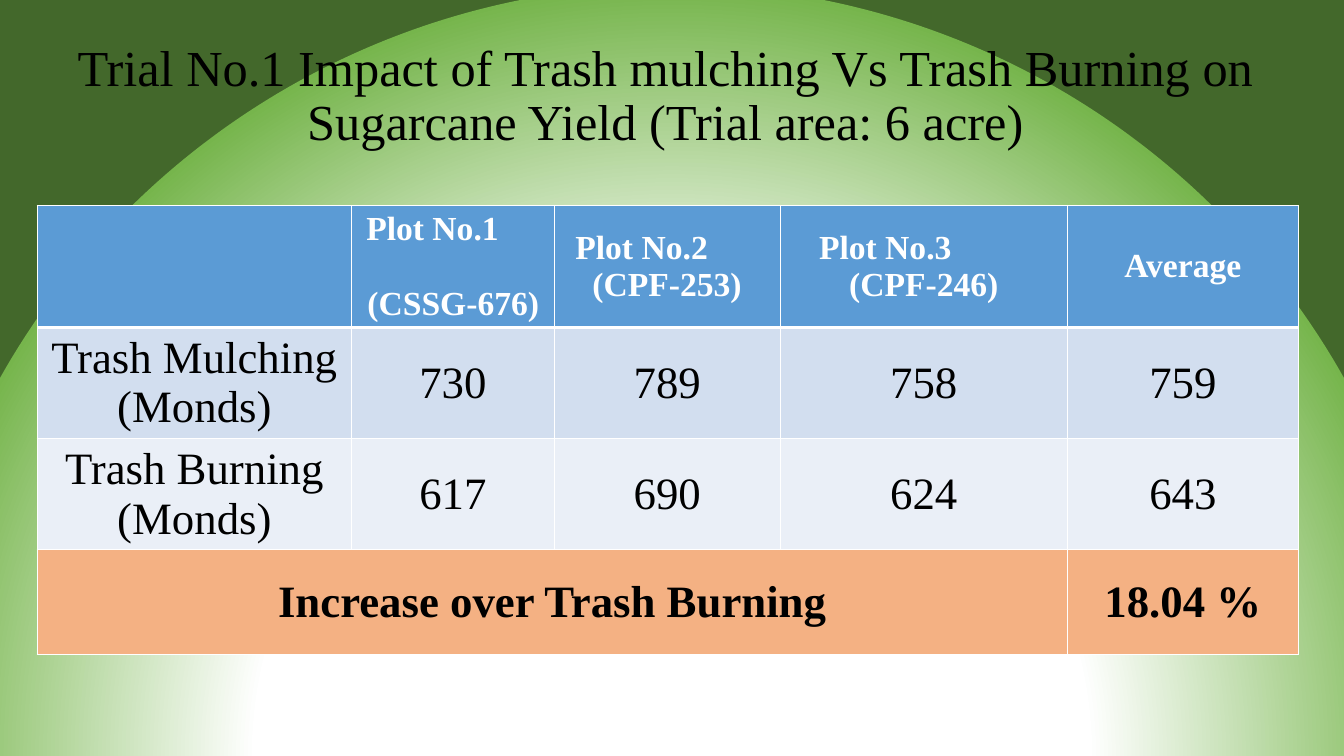
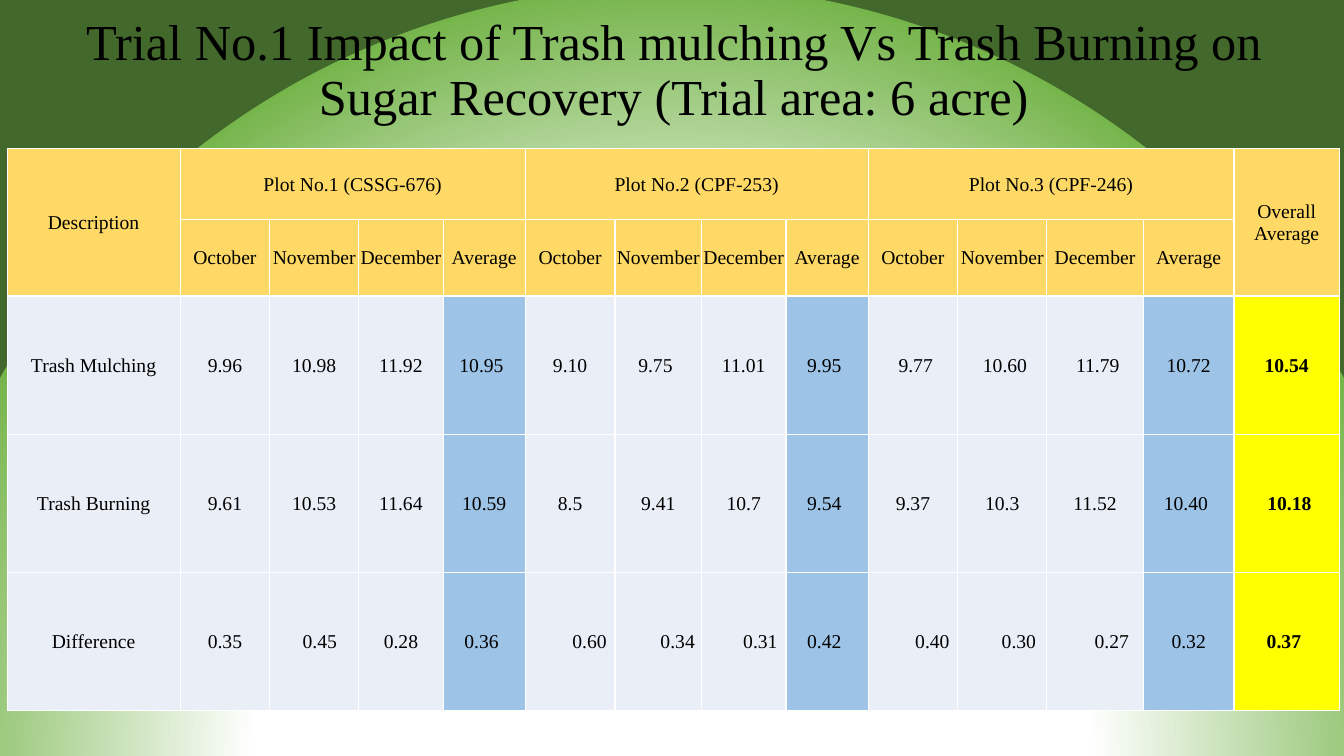
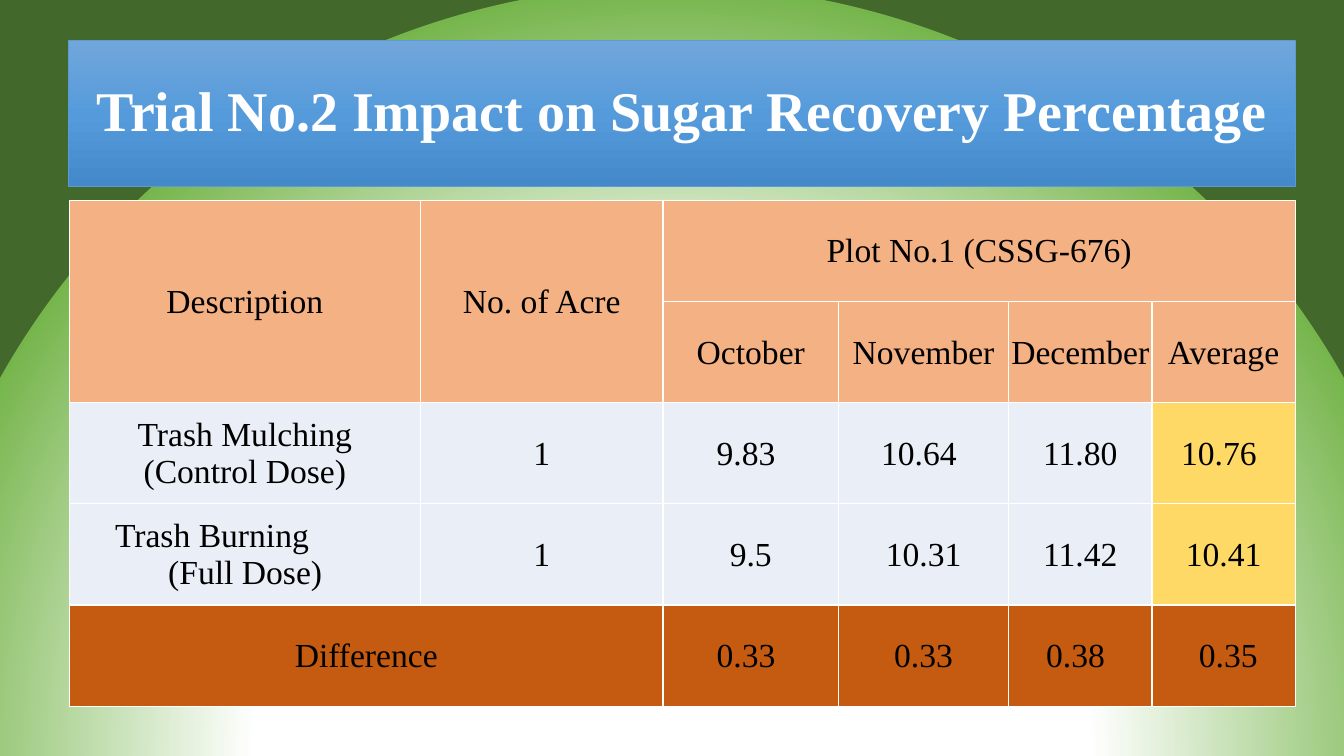
from dataclasses import dataclass, field
from itertools import product

from pptx import Presentation
from pptx.dml.color import RGBColor
from pptx.enum.shapes import MSO_SHAPE as Shape
from pptx.enum.text import MSO_ANCHOR as Anchor, PP_ALIGN as Align
from pptx.oxml import parse_xml
from pptx.oxml.ns import nsdecls
from pptx.util import Cm, Pt


@dataclass(frozen=True)
class Theme:
    font: str = "Times New Roman"
    black: str = "000000"
    white: str = "FFFFFF"
    blue: str = "5B9BD5"
    sky: str = "9DC3E6"
    mist: str = "D2DEEF"
    pale: str = "EAEFF7"
    peach: str = "F4B183"
    gold: str = "FFD966"
    yellow: str = "FFFF00"
    rust: str = "C55A11"
    title: int = 36
    banner: int = 40
    large: int = 32
    medium: int = 24
    small: int = 14
    space: float = 0.25
    cm_per_point: float = 0.04
    backdrop: tuple = ((54, "FFFFFF", 70), (100, "76B54C", 100), (100, "43682B", 100))
    banner_fill: tuple = ((0, "71A6DB", 100), (50, "559BDB", 100), (100, "448ACA", 100))


THEME = Theme()
RADIAL = '<a:path {} path="circle"><a:fillToRect l="50000" t="130000" r="50000" b="-30000"/></a:path>'
DOWNWARD = '<a:lin {} ang="5400000" scaled="0"/>'
MONTHS = ["October", "November", "December", "Average"]


@dataclass
class TrialSlide:
    title: str
    title_box: tuple
    corner: tuple
    columns: list
    rows: list
    cells: list
    fills: list
    sizes: list
    spans: list
    banner: bool = False
    compact: bool = True
    bold_rows: tuple = ()
    bold_columns: tuple = ()
    accents: dict = field(default_factory=dict)
    nudges: dict = field(default_factory=dict)
    indents: dict = field(default_factory=dict)
    gaps: dict = field(default_factory=dict)
    heavy_row: int = 0


SLIDES = [
    TrialSlide(
        title="Trial No.1 Impact of Trash mulching Vs Trash Burning on Sugarcane Yield (Trial area: 6 acre)",
        title_box=(0.58, 0.91, 32.39, 3.07),
        corner=(0.94, 5.18),
        columns=[7.92, 5.11, 5.69, 7.24, 5.82],
        rows=[3.07, 2.8, 2.8, 2.64],
        cells=[
            [None, "Plot No.1\n(CSSG-676)", "Plot No.2\n(CPF-253)", "Plot No.3\n(CPF-246)", "Average"],
            ["Trash Mulching\n(Monds)", "730", "789", "758", "759"],
            ["Trash Burning (Monds)", "617", "690", "624", "643"],
            ["Increase over Trash Burning", None, None, None, "18.04 %"],
        ],
        fills=[THEME.blue, THEME.mist, THEME.pale, THEME.peach],
        sizes=[THEME.medium] + [THEME.large] * 3,
        spans=[(3, 0, 1, 4)],
        compact=False,
        bold_rows=(0, 3),
        indents={(0, 1): (0.12, 0.15), (0, 2): (0.28, 0.71), (0, 3): (0.73, 1.49)},
        gaps={(0, 1): 0.94},
        heavy_row=1,
    ),
    TrialSlide(
        title="Trial No.1 Impact of Trash mulching Vs Trash Burning on Sugar Recovery (Trial area: 6 acre)",
        title_box=(0.58, 0.28, 32.82, 3.05),
        corner=(0.18, 3.75),
        columns=[4.36, 2.26, 2.24, 2.13, 2.07, 2.26, 2.18, 2.13, 2.07, 2.26, 2.24, 2.44, 2.28, 2.66],
        rows=[1.78, 1.93] + [3.48] * 3,
        cells=[
            ["Description", "Plot No.1 (CSSG-676)", None, None, None, "Plot No.2 (CPF-253)", None, None, None,
             "Plot No.3 (CPF-246)", None, None, None, "Overall Average"],
            [None, *MONTHS * 3, None],
            ["Trash Mulching", "9.96", "10.98", "11.92", "10.95", "9.10", "9.75", "11.01", "9.95",
             "9.77", "10.60", "11.79", "10.72", "10.54"],
            ["Trash Burning", "9.61", "10.53", "11.64", "10.59", "8.5", "9.41", "10.7", "9.54",
             "9.37", "10.3", "11.52", "10.40", "10.18"],
            ["Difference", "0.35", "0.45", "0.28", "0.36", "0.60", "0.34", "0.31", "0.42",
             "0.40", "0.30", "0.27", "0.32", "0.37"],
        ],
        fills=[THEME.gold] * 2 + [THEME.pale] * 3,
        sizes=[THEME.small] * 5,
        spans=[(0, 0, 2, 1), (0, 1, 1, 4), (0, 5, 1, 4), (0, 9, 1, 4), (0, 13, 2, 1)],
        bold_columns=(13,),
        accents={4: THEME.sky, 8: THEME.sky, 12: THEME.sky, 13: THEME.yellow},
        nudges={
            2: [0, 0, 0, 0, -1, 0, -1, 0, -1, 1, 1, 1, 0, 0],
            3: [0, 0, 0, 0, 0, 0, 0, 0, -1, 0, 0, 0, -1, 1],
            4: [0, 0, 2, 0, -1, 7, 7, 6, -1, 7, 6, 6, 0, -1],
        },
    ),
    TrialSlide(
        title="Trial No.2 Impact on Sugar Recovery Percentage",
        title_box=(1.73, 1.02, 30.91, 3.68),
        corner=(1.75, 5.05),
        columns=[8.84, 6.12, 4.42, 4.29, 3.61, 3.61],
        rows=[2.55] * 5,
        cells=[
            ["Description", "No. of Acre", "Plot No.1 (CSSG-676)", None, None, None],
            [None, None, *MONTHS],
            ["Trash Mulching\n(Control Dose)", "1", "9.83", "10.64", "11.80", "10.76"],
            ["Trash Burning\n(Full Dose)", "1", "9.5", "10.31", "11.42", "10.41"],
            ["Difference", None, "0.33", "0.33", "0.38", "0.35"],
        ],
        fills=[THEME.peach] * 2 + [THEME.pale] * 2 + [THEME.rust],
        sizes=[THEME.medium] * 5,
        spans=[(0, 0, 2, 1), (0, 1, 2, 1), (0, 2, 1, 4), (4, 0, 1, 2)],
        banner=True,
        accents={5: THEME.gold},
        nudges={2: [0, 0, -1, -1, 0, -1], 4: [0, 0, -1, 0, -1, 1]},
        indents={(3, 0): (1.13, 2.47)},
    ),
]


def set_gradient(parent, stops, direction):
    gradient = parent.xpath(".//a:gradFill")[0]
    for child in list(gradient):
        gradient.remove(child)
    marks = "".join(
        f'<a:gs pos="{position * 1000}"><a:srgbClr val="{colour}">'
        f'<a:alpha val="{opacity * 1000}"/></a:srgbClr></a:gs>'
        for position, colour, opacity in stops
    )
    gradient.append(parse_xml(f'<a:gsLst {nsdecls("a")}>{marks}</a:gsLst>'))
    gradient.append(parse_xml(direction.format(nsdecls("a"))))


def style_paragraph(paragraph, size, colour, bold):
    for font in [paragraph.font, *(run.font for run in paragraph.runs)]:
        font.name, font.size, font.bold = THEME.font, Pt(size), bold
        font.color.rgb = RGBColor.from_string(colour)


def add_title(slide, content):
    box = [Cm(length) for length in content.title_box]
    if content.banner:
        shape = slide.shapes.add_shape(Shape.RECTANGLE, *box)
        shape.shadow.inherit = False
        shape.fill.gradient()
        set_gradient(shape.element.spPr, THEME.banner_fill, DOWNWARD)
        shape.line.color.rgb = RGBColor.from_string(THEME.blue)
        shape.line.width = Pt(0.5)
        size, colour = THEME.banner, THEME.white
    else:
        shape = slide.shapes.add_textbox(*box)
        size, colour = THEME.title, THEME.black
    frame = shape.text_frame
    frame.text = content.title
    frame.word_wrap = True
    frame.vertical_anchor = Anchor.MIDDLE
    paragraph = frame.paragraphs[0]
    paragraph.alignment = Align.CENTER
    paragraph.line_spacing = 0.9
    style_paragraph(paragraph, size, colour, content.banner)


def add_borders(cell, top, bottom):
    properties = cell._tc.get_or_add_tcPr()
    for side, width in (("L", 1), ("R", 1), ("T", top), ("B", bottom)):
        properties.append(parse_xml(
            f'<a:ln{side} {nsdecls("a")} w="{Pt(width)}"><a:solidFill>'
            f'<a:srgbClr val="{THEME.white}"/></a:solidFill></a:ln{side}>'
        ))


def set_margins(cell, compact, shift):
    side, top, bottom = (0.02, 0.03, 0) if compact else (0.25, 0.03, 0.03)
    cell.margin_left = Cm(side + max(shift, 0))
    cell.margin_right = Cm(side + max(-shift, 0))
    cell.margin_top, cell.margin_bottom = Cm(top), Cm(bottom)


def fill_cell(cell, content, row, column):
    base = content.fills[row]
    body = base == THEME.pale
    fill = content.accents.get(column, base) if body else base
    size = content.sizes[row]
    bold = row in content.bold_rows or (body and column in content.bold_columns)
    nudge = content.nudges[row][column] if row in content.nudges else 0
    heavy = content.heavy_row
    add_borders(cell, 3 if heavy and row == heavy else 1, 3 if row == heavy - 1 else 1)
    cell.fill.solid()
    cell.fill.fore_color.rgb = RGBColor.from_string(fill)
    set_margins(cell, content.compact, nudge * size * THEME.space * THEME.cm_per_point)
    cell.vertical_anchor = Anchor.MIDDLE
    text = content.cells[row][column]
    if text is None:
        return
    cell.text_frame.text = text
    indents = content.indents.get((row, column))
    for index, paragraph in enumerate(cell.text_frame.paragraphs):
        paragraph.alignment = Align.LEFT if indents else Align.CENTER
        if indents:
            paragraph._p.get_or_add_pPr().set("marL", str(Cm(indents[index])))
        if index and (row, column) in content.gaps:
            paragraph.space_before = Cm(content.gaps[row, column])
        style_paragraph(paragraph, size, THEME.white if fill == THEME.blue else THEME.black, bold)


def add_trial_table(slide, content):
    row_count, column_count = len(content.rows), len(content.columns)
    left, top = content.corner
    table = slide.shapes.add_table(
        row_count, column_count, Cm(left), Cm(top), Cm(sum(content.columns)), Cm(sum(content.rows))
    ).table
    table.first_row = table.horz_banding = False
    for column, width in zip(table.columns, content.columns):
        column.width = Cm(width)
    for row, height in zip(table.rows, content.rows):
        row.height = Cm(height)
    for row, column in product(range(row_count), range(column_count)):
        fill_cell(table.cell(row, column), content, row, column)
    for row, column, tall, wide in content.spans:
        table.cell(row, column).merge(table.cell(row + tall - 1, column + wide - 1))


def main():
    presentation = Presentation()
    presentation.slide_width, presentation.slide_height = Cm(33.87), Cm(19.05)
    master = presentation.slide_master
    master.background.fill.gradient()
    set_gradient(master.element.cSld, THEME.backdrop, RADIAL)
    for content in SLIDES:
        slide = presentation.slides.add_slide(presentation.slide_layouts[6])
        add_title(slide, content)
        add_trial_table(slide, content)
    presentation.save("out.pptx")


if __name__ == "__main__":
    main()
